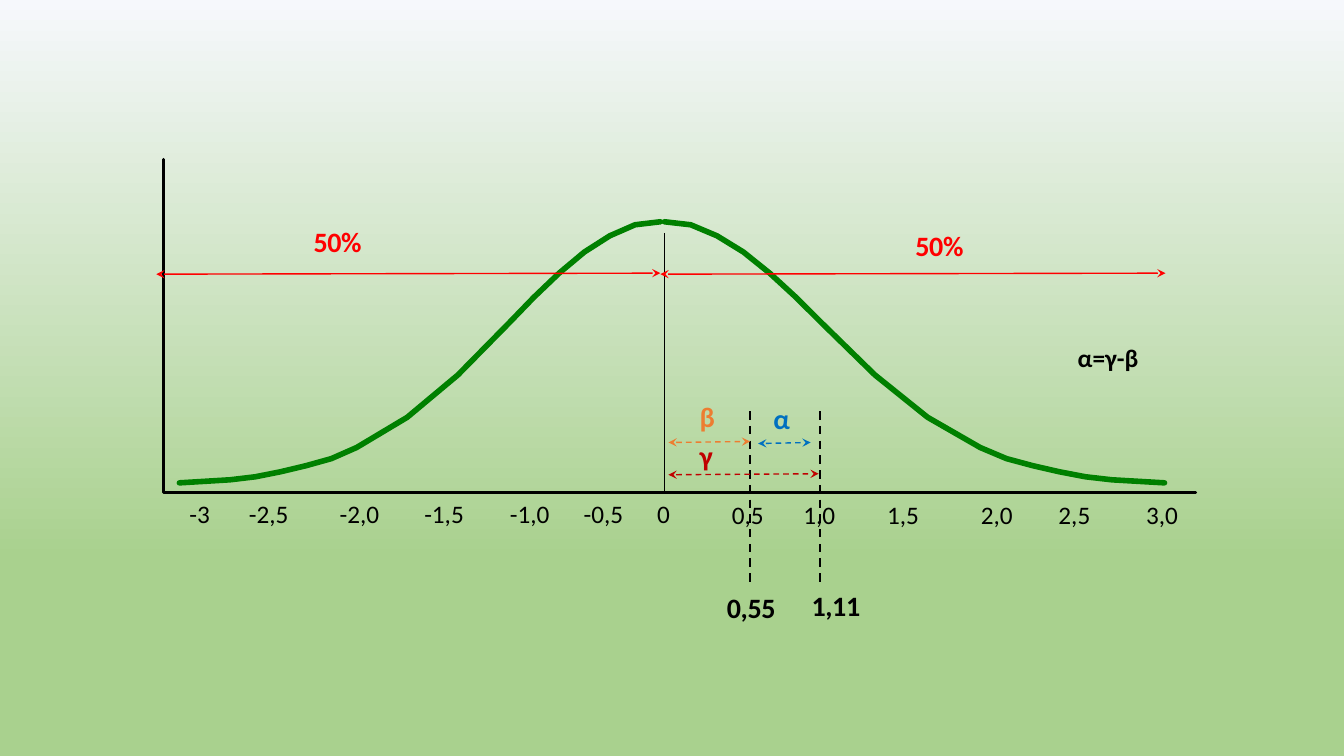
import pptx
import pptx.util
import pptx.dml.color
import pptx.enum.dml
import pptx.enum.shapes
import pptx.enum.text
import pptx.oxml
import pptx.oxml.ns
from lxml import etree

Inches = pptx.util.Inches
Pt = pptx.util.Pt
RGBColor = pptx.dml.color.RGBColor
qn = pptx.oxml.ns.qn

BLACK = RGBColor(0x00, 0x00, 0x00)
GREEN = RGBColor(0x00, 0x80, 0x00)
RED = RGBColor(0xFF, 0x00, 0x00)
DARK_RED = RGBColor(0xC0, 0x00, 0x00)
ORANGE = RGBColor(0xED, 0x7D, 0x31)
BLUE = RGBColor(0x00, 0x70, 0xC0)
SKY = RGBColor(0xF6, 0xF8, 0xFC)
MEADOW = RGBColor(0xA9, 0xD1, 0x8E)

# Curve from its tail to its peak: steps along x, and heights in inches
CURVE_STEPS = [0, 2, 3, 4, 5, 6, 7, 9, 11, 13, 14, 15, 16, 17, 18, 19]
CURVE_Y = [4.79, 4.76, 4.73, 4.68, 4.62, 4.55, 4.44, 4.14,
           3.72, 3.21, 2.95, 2.71, 2.5, 2.34, 2.23, 2.2]

# Tail x and peak x of each half
HALVES = [(11.55, 6.59), (1.78, 6.55)]

# Left, top, width of the box; labels; left edge of each label after the first
SCALES = [
    (1.78, 4.89, 5.4, ["-3", "-2,5", "-2,0", "-1,5", "-1,0", "-0,5", "0"],
     [2.47, 3.37, 4.21, 5.06, 5.79, 6.52]),
    (7.16, 4.9, 4.93, ["0,5", "1,0", "1,5", "2,0", "2,5", "3,0"],
     [7.97, 8.8, 9.73, 10.5, 11.37]),
]

# Left, top, width, height, text, colour, letter spacing
LABELS = [
    (8.04, 5.83, 0.55, 0.36, "1,11", BLACK, -30),
    (7.2, 5.85, 0.55, 0.36, "0,55", BLACK, -30),
    (9.07, 2.26, 0.73, 0.36, "50%", RED, -30),
    (3.1, 2.22, 0.73, 0.36, "50%", RED, -30),
    (6.93, 3.95, 0.28, 0.35, "β", ORANGE, -20),
    (7.66, 3.97, 0.28, 0.35, "α", BLUE, -20),
    (6.93, 4.34, 0.28, 0.35, "γ", DARK_RED, -20),
]

# Left x, right x, left y, colour, dashed
SPANS = [
    (6.55, 11.56, 2.72, RED, False),
    (1.55, 6.55, 2.72, RED, False),
    (6.63, 8.12, 4.71, DARK_RED, True),
    (6.63, 7.44, 4.39, ORANGE, True),
    (7.52, 8.04, 4.4, BLUE, True),
]


class Diagram:
    font = "Calibri"
    inset = 0.1

    def __init__(self, s):
        self.s = s

    def background(self, top, bottom, reach):
        fill = self.s.background.fill
        fill.gradient()
        fill.gradient_angle = 270
        for stop, color, position in zip(fill.gradient_stops, (top, bottom), (0, reach)):
            stop.color.rgb = color
            stop.position = position

    def text(self, x, y, w, h, text, **formats):
        sp = self.s.shapes.add_textbox(*map(Inches, (x, y, w, h)))
        tf = sp.text_frame
        tf.word_wrap = True
        tf.auto_size = pptx.enum.text.MSO_AUTO_SIZE.SHAPE_TO_FIT_TEXT
        p = tf.paragraphs[0]
        r = p.add_run()
        r.text = text
        r.font.color.rgb = formats.pop("color", BLACK)
        for name, value in {"name": self.font, "size": Pt(18), **formats}.items():
            setattr(r.font, name, value)
        return sp

    def label(self, x, y, w, h, text, color, spacing):
        """Bold label with tight insets."""
        sp = self.text(x, y, w, h, text, color=color, size=Pt(20), bold=True)
        tf = sp.text_frame
        margins = {"margin_left": 0, "margin_top": Inches(0.01),
                   "margin_right": 0, "margin_bottom": 0}
        for name, value in margins.items():
            setattr(tf, name, value)
        p = tf.paragraphs[0]
        p.space_before = Pt(0.9)
        p._p.get_or_add_pPr().set("marL", str(Inches(0.01)))
        p.runs[0]._r.get_or_add_rPr().set("spc", str(spacing))

    def scale(self, x, y, w, labels, stops):
        """Axis labels set on tab stops."""
        sp = self.text(x, y, w, 0.4, "\t".join(labels))
        pPr = sp.text_frame.paragraphs[0]._p.get_or_add_pPr()
        tabs = etree.SubElement(pPr, qn("a:tabLst"))
        for stop in stops:
            etree.SubElement(tabs, qn("a:tab"), pos=str(Inches(stop - x - self.inset)), algn="l")

    def outline(self, points, color, width):
        points = [(Inches(x), Inches(y)) for x, y in points]
        builder = self.s.shapes.build_freeform(*points[0])
        builder.add_line_segments(points[1:], close=False)
        sp = builder.convert_to_shape()
        sp.shadow.inherit = False
        sp.fill.background()
        sp.line.color.rgb = color
        sp.line.width = Pt(width)
        ln = sp.line._get_or_add_ln()
        ln.set("cap", "rnd")
        etree.SubElement(ln, qn("a:round"))

    def line(self, x1, y1, x2, y2, color=BLACK, width=1, dashed=False, arrows=False):
        straight = pptx.enum.shapes.MSO_CONNECTOR.STRAIGHT
        cxn = self.s.shapes.add_connector(straight, *map(Inches, (x1, y1, x2, y2)))
        cxn.line.color.rgb = color
        cxn.line.width = Pt(width)
        if dashed:
            cxn.line.dash_style = pptx.enum.dml.MSO_LINE.DASH
        if arrows:
            ln = cxn.line._get_or_add_ln()
            for end in ("a:headEnd", "a:tailEnd"):
                etree.SubElement(ln, qn(end), type="stealth")
        etree.SubElement(cxn._element.spPr, qn("a:effectLst"))


def main():
    prs = pptx.Presentation()
    prs.slide_width, prs.slide_height = Inches(13.33), Inches(7.5)
    d = Diagram(prs.slides.add_slide(prs.slide_layouts[6]))
    d.background(SKY, MEADOW, 0.74)

    d.outline([(1.62, 1.58), (1.62, 4.89), (11.86, 4.89)], BLACK, 2)
    for tail, peak in HALVES:
        step = (peak - tail) / CURVE_STEPS[-1]
        d.outline([(tail + n * step, y) for n, y in zip(CURVE_STEPS, CURVE_Y)], GREEN, 4)

    d.line(6.59, 2.31, 6.59, 4.89)
    for x in (7.44, 8.13):
        d.line(x, 4.08, x, 5.81, width=1.5, dashed=True)
    for left, right, y, color, dashed in SPANS:
        d.line(left, y, right, y - 0.01, color, dashed=dashed, arrows=True)

    for scale in SCALES:
        d.scale(*scale)
    for label in LABELS:
        d.label(*label)
    formula = d.text(10.59, 3.35, 1.02, 0.4, "α=γ-β", bold=True)
    formula.text_frame.paragraphs[0].alignment = pptx.enum.text.PP_ALIGN.JUSTIFY

    prs.save("out.pptx")


if __name__ == "__main__":
    main()
